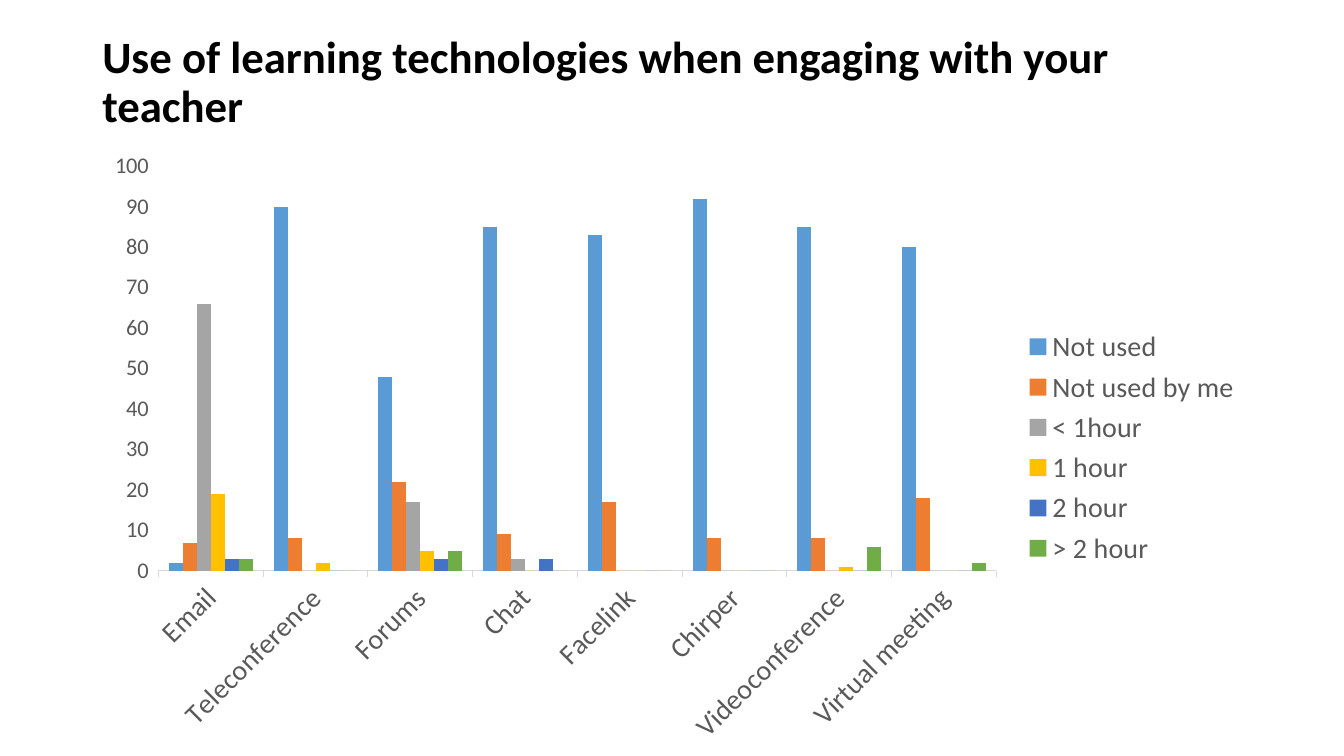
from lxml import etree
from pptx import Presentation
from pptx import util as u
from pptx.chart.data import CategoryChartData
from pptx.dml.color import RGBColor
from pptx.enum import chart as charts, text
from pptx.oxml import ns

FONT = "Calibri"
COLOURS = {"title": "000000", "label": "595959", "axis": "D9D9D9", "grid": "FFFFFF"}
TECHNOLOGIES = ["Email", "Teleconference", "Forums", "Chat", "Facelink", "Chirper",
                "Videoconference", "Virtual meeting"]
USAGE = [
    ("Not used", "5B9BD5", [2, 90, 48, 85, 83, 92, 85, 80]),
    ("Not used by me", "ED7D31", [7, 8, 22, 9, 17, 8, 8, 18]),
    ("< 1hour", "A5A5A5", [66, 0, 17, 3, 0, 0, 0, 0]),
    ("1 hour", "FFC000", [19, 2, 5, 0, 0, 0, 1, 0]),
    ("2 hour", "4472C4", [3, 0, 3, 3, 0, 0, 0, 0]),
    ("> 2 hour", "70AD47", [3, 0, 5, 0, 0, 0, 6, 2]),
]


def style_font(font, size, colour, bold=False):
    """Set the face, size, colour and weight of a font."""
    font.name, font.size, font.bold = FONT, u.Pt(size), bold
    font.color.rgb = RGBColor.from_string(COLOURS[colour])


def style_line(line, colour):
    """Draw a thin solid line in a named colour."""
    line.width = u.Pt(0.75)
    line.color.rgb = RGBColor.from_string(COLOURS[colour])


def add_title(page, left, top, width, height):
    """Place the bold slide heading in the given box."""
    box = page.shapes.add_textbox(*map(u.Pt, (left, top, width, height)))
    frame = box.text_frame
    frame.word_wrap = True
    frame.vertical_anchor = text.MSO_ANCHOR.MIDDLE
    frame.text = "Use of learning technologies when engaging with your teacher"
    para = frame.paragraphs[0]
    para.line_spacing = 0.9
    style_font(para.runs[0].font, 32, "title", bold=True)


def place_plot(chart, **fractions):
    """Fix the inner plot area as fractions of the chart box."""
    area = chart.plots[0]._element.getparent()
    for old in area.findall(ns.qn("c:layout")):
        area.remove(old)
    layout = etree.Element(ns.qn("c:layout"))
    manual = etree.SubElement(layout, ns.qn("c:manualLayout"))
    settings = {"layoutTarget": "inner", "xMode": "edge", "yMode": "edge", **fractions}
    for tag, value in settings.items():
        etree.SubElement(manual, ns.qn("c:" + tag)).set("val", str(value))
    area.insert(0, layout)


def style_axes(chart):
    """Format the slanted category labels and the 0 to 100 value scale."""
    category = chart.category_axis
    style_font(category.tick_labels.font, 20, "label")
    style_line(category.format.line, "axis")
    category.major_tick_mark = charts.XL_TICK_MARK.OUTSIDE
    body = category._element.find(ns.qn("c:txPr")).find(ns.qn("a:bodyPr"))
    body.set("rot", "-2700000")
    body.set("vert", "horz")
    value = chart.value_axis
    value.minimum_scale, value.maximum_scale, value.major_unit = 0, 100, 10
    style_font(value.tick_labels.font, 16, "label")
    value.format.line.fill.background()
    value.major_tick_mark = charts.XL_TICK_MARK.OUTSIDE
    style_line(value.major_gridlines.format.line, "grid")


def add_usage_chart(page, left, top, width, height):
    """Place the clustered column chart and its legend in the given box."""
    data = CategoryChartData()
    data.categories = TECHNOLOGIES
    for name, _, values in USAGE:
        data.add_series(name, values)
    chart = page.shapes.add_chart(charts.XL_CHART_TYPE.COLUMN_CLUSTERED,
                                  *map(u.Pt, (left, top, width, height)), data).chart
    style_font(chart.font, 16, "title")
    chart.has_title = False
    plot = chart.plots[0]
    plot.gap_width, plot.overlap, plot.vary_by_categories = 150, 0, False
    for series, (_, colour, _) in zip(plot.series, USAGE):
        series.format.fill.solid()
        series.format.fill.fore_color.rgb = RGBColor.from_string(colour)
    style_axes(chart)
    place_plot(chart, x=0.057, y=0.044, w=0.723, h=0.656)
    chart.has_legend = True
    chart.legend.position = charts.XL_LEGEND_POSITION.RIGHT
    chart.legend.include_in_layout = False
    style_font(chart.legend.font, 20, "label")


def main():
    """Build and save the one-slide deck."""
    deck = Presentation()
    deck.slide_width, deck.slide_height = u.Pt(960), u.Pt(540)
    page = deck.slides.add_slide(deck.slide_layouts[6])
    left, width = 66, 828
    add_title(page, left, 28.75, width, 62)
    add_usage_chart(page, left, 99.4, width, 440.6)
    deck.save("out.pptx")


if __name__ == "__main__":
    main()
